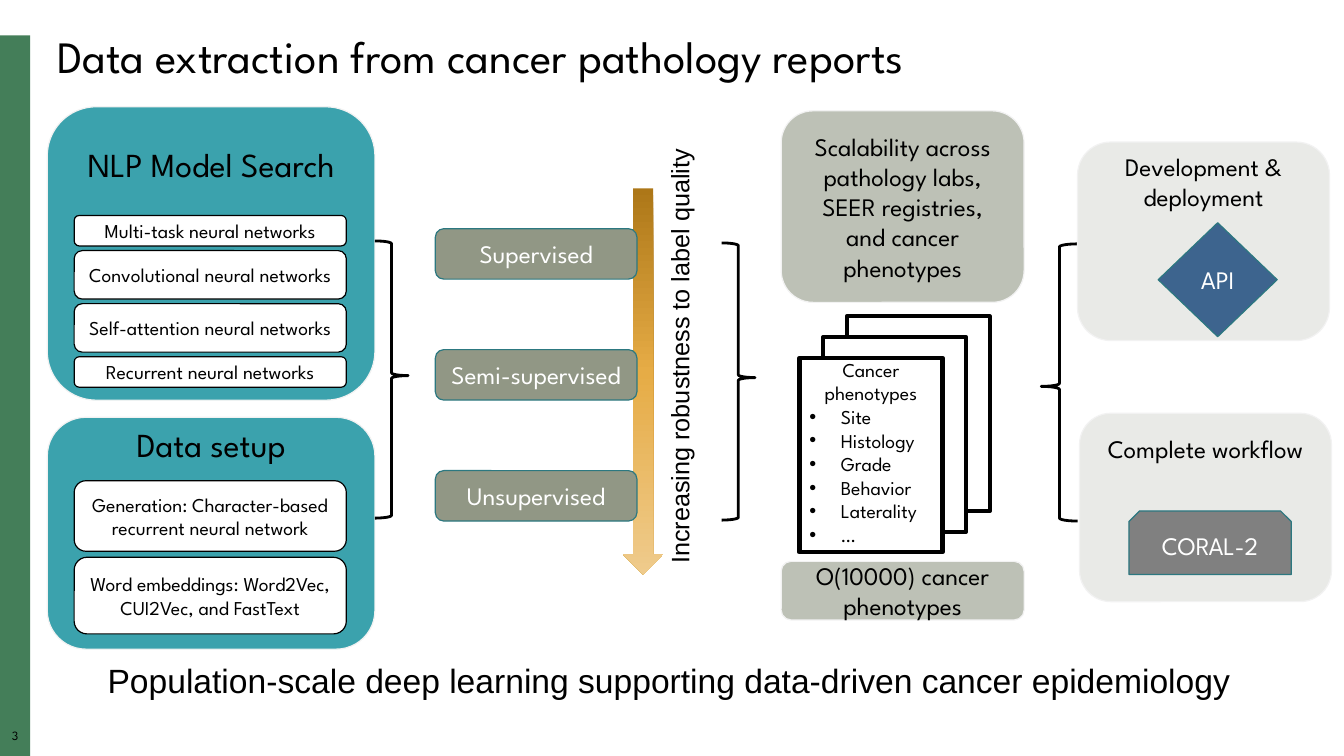
from copy import deepcopy

from lxml import etree
from pptx import Presentation
from pptx.dml.color import RGBColor
from pptx.enum import shapes, text
from pptx.oxml import ns
from pptx.util import Pt

BLACK = RGBColor(0x00, 0x00, 0x00)
WHITE = RGBColor(0xFF, 0xFF, 0xFF)
GREEN = RGBColor(0x44, 0x7E, 0x59)
TEAL = RGBColor(0x3B, 0xA2, 0xAD)
DARK_TEAL = RGBColor(0x2C, 0x78, 0x80)
OLIVE = RGBColor(0x91, 0x97, 0x85)
SAGE = RGBColor(0xBD, 0xC1, 0xB6)
PALE = RGBColor(0xE9, 0xEA, 0xE7)
EDGE = RGBColor(0xF2, 0xF2, 0xF2)
BLUE = RGBColor(0x3D, 0x64, 0x8E)
GRAY = RGBColor(0x80, 0x80, 0x80)
GOLD_STOPS = [
    (0, RGBColor(0xAD, 0x77, 0x18)),
    (0.48, RGBColor(0xE6, 0xAC, 0x46)),
    (1, RGBColor(0xEF, 0xCB, 0x8C)),
]

SPARTAN = "League Spartan"
ARIAL = "Arial"
SHAPE = shapes.MSO_SHAPE
CENTER = text.PP_ALIGN.CENTER
LEFT = text.PP_ALIGN.LEFT


def add_part(slide, kind, box, fill=None, line=None, width=0.85):
    shape = slide.shapes.add_shape(kind, *map(Pt, box))
    shape.shadow.inherit = False
    if fill is None:
        shape.fill.background()
    else:
        shape.fill.solid()
        shape.fill.fore_color.rgb = fill
    if line is None:
        shape.line.fill.background()
    else:
        shape.line.color.rgb = line
        shape.line.width = Pt(width)
    return shape


def style_paragraph(paragraph, size, color=BLACK, font=SPARTAN, align=CENTER):
    paragraph.alignment = align
    paragraph.font.size = Pt(size)
    paragraph.font.name = font
    paragraph.font.color.rgb = color


def write(shape, words, size, color=BLACK):
    frame = shape.text_frame
    frame.word_wrap = True
    frame.vertical_anchor = text.MSO_ANCHOR.MIDDLE
    frame.text = words
    style_paragraph(frame.paragraphs[0], size, color)


def add_label(slide, box, words, size, font=SPARTAN, align=LEFT):
    label = slide.shapes.add_textbox(*map(Pt, box))
    label.text_frame.word_wrap = True
    label.text_frame.text = words
    style_paragraph(label.text_frame.paragraphs[0], size, font=font, align=align)
    return label


def add_panel(slide, box, heading, size, fill, space_below):
    panel = add_part(slide, SHAPE.ROUNDED_RECTANGLE, box, fill, EDGE)
    write(panel, heading, size)
    panel.text_frame.margin_top = 0
    panel.text_frame.margin_bottom = Pt(space_below)


def add_side_bar(slide, box, number):
    left, top, width, height = box
    add_part(slide, SHAPE.RECTANGLE, box, GREEN)
    label = add_label(slide, (left, top + height - 18.5, width, 12.5), number, 9, align=CENTER)
    frame = label.text_frame
    frame.margin_left = frame.margin_right = frame.margin_top = frame.margin_bottom = 0
    frame.paragraphs[0].line_spacing = 0.9


def add_method_panel(slide, box, heading, first_item, gap, items):
    left, top, width, _ = box
    add_panel(slide, box, heading, 24, TEAL, 128)
    item_top = top + first_item
    for words, height in items:
        item_box = (left + 19.2, item_top, width - 39.6, height)
        item = add_part(slide, SHAPE.ROUNDED_RECTANGLE, item_box, WHITE, BLACK)
        write(item, words, 14)
        item_top += height + gap


def add_brace(slide, box, rotation=0):
    brace = add_part(slide, SHAPE.RIGHT_BRACE, box, line=BLACK, width=2)
    brace.adjustments[0] = 0.083
    brace.adjustments[1] = 0.486
    brace.rotation = rotation


def add_supervision_scale(slide, box, levels):
    left, top, width, height = box
    arrow = add_part(slide, SHAPE.DOWN_ARROW, (left + 134, top, 28.8, height), WHITE)
    arrow.fill.gradient()
    arrow.fill.gradient_angle = 270
    stop_list = arrow.element.spPr.find(".//" + ns.qn("a:gsLst"))
    stop_list.append(deepcopy(stop_list[0]))
    for stop, (position, color) in zip(arrow.fill.gradient_stops, GOLD_STOPS):
        stop.position = position
        stop.color.rgb = color
    for row, level in enumerate(levels):
        level_box = (left, top + 28.8 + row * 86.4, 144, 36)
        button = add_part(slide, SHAPE.ROUNDED_RECTANGLE, level_box, OLIVE, DARK_TEAL)
        write(button, level, 18, WHITE)
    label_width, label_height = 332.6, 28.8
    label_box = (
        left + width - (label_width + label_height) / 2,
        top + 108.8 - label_height / 2,
        label_width,
        label_height,
    )
    label = add_label(slide, label_box, "Increasing robustness to label quality", 18, ARIAL)
    label.rotation = 270


def add_phenotype_column(slide, box, phenotypes):
    left, top, width, height = box
    scalability = add_part(slide, SHAPE.ROUNDED_RECTANGLE, (left, top, width, 136.8), SAGE, EDGE)
    write(scalability, "Scalability across pathology labs, SEER registries, and cancer phenotypes", 18)
    for depth in (2, 1, 0):
        card_box = (left + 13 + depth * 16.9, top + 176.4 - depth * 14.8, 102.2, 139)
        card = add_part(slide, SHAPE.RECTANGLE, card_box, WHITE, BLACK, 3)
    write(card, "Cancer phenotypes", 14)
    frame = card.text_frame
    frame.vertical_anchor = text.MSO_ANCHOR.TOP
    frame.margin_top = 0
    for phenotype in phenotypes:
        paragraph = frame.add_paragraph()
        paragraph.text = phenotype
        properties = paragraph._p.get_or_add_pPr()
        properties.set("marL", str(Pt(22.5)))
        properties.set("indent", str(Pt(-22.5)))
        etree.SubElement(properties, ns.qn("a:buFont"), typeface=ARIAL)
        etree.SubElement(properties, ns.qn("a:buChar"), char="•")
        style_paragraph(paragraph, 14, align=LEFT)
    count_box = (left, top + height - 41.8, width, 41.8)
    count = add_part(slide, SHAPE.ROUNDED_RECTANGLE, count_box, SAGE, EDGE)
    write(count, "O(10000) cancer phenotypes", 18)


def add_delivery_panel(slide, box, heading, kind, badge_box, badge_words, badge_fill):
    left, top, _, _ = box
    add_panel(slide, box, heading, 18, PALE, 85)
    badge_left, badge_top, badge_width, badge_height = badge_box
    badge = add_part(
        slide, kind, (left + badge_left, top + badge_top, badge_width, badge_height), badge_fill, DARK_TEAL
    )
    write(badge, badge_words, 18, WHITE)


def main():
    presentation = Presentation()
    presentation.slide_width, presentation.slide_height = Pt(960), Pt(540)
    slide = presentation.slides.add_slide(presentation.slide_layouts[6])
    add_side_bar(slide, (0, 25.2, 21.6, 514.8), "3")
    title = add_label(slide, (33.8, 21.6, 900, 42.5), "Data extraction from cancer pathology reports", 32)
    title.text_frame.paragraphs[0].line_spacing = 0.9
    add_method_panel(slide, (33.8, 76.3, 234, 209.5), "NLP Model Search", 77.6, 3.3, [
        ("Multi-task neural networks", 21.8),
        ("Convolutional neural networks", 34.6),
        ("Self-attention neural networks", 34.6),
        ("Recurrent neural networks", 21.8),
    ])
    add_method_panel(slide, (33.8, 298.1, 234, 165.6), "Data setup", 45.3, 4.3, [
        ("Generation: Character-based recurrent neural network", 50.4),
        ("Word embeddings: Word2Vec, CUI2Vec, and FastText", 54.7),
    ])
    add_brace(slide, (267.8, 172.1, 23.8, 198))
    add_supervision_scale(
        slide, (311, 134.6, 188.6, 275.8), ["Supervised", "Semi-supervised", "Unsupervised"]
    )
    add_brace(slide, (515.5, 173.5, 23.8, 198))
    add_phenotype_column(
        slide, (558, 79.2, 173.5, 363.6), ["Site", "Histology", "Grade", "Behavior", "Laterality", "…"]
    )
    add_brace(slide, (743.8, 174.2, 25.9, 198), 180)
    add_delivery_panel(
        slide, (769.7, 101.5, 180, 141.8), "Development & deployment",
        SHAPE.DIAMOND, (57.6, 57.6, 85, 81.4), "API", BLUE,
    )
    add_delivery_panel(
        slide, (771.1, 295.2, 180, 134.6), "Complete workflow",
        SHAPE.SNIP_2_SAME_RECTANGLE, (35.3, 69.8, 115.9, 45.4), "CORAL-2", GRAY,
    )
    conclusion = "Population-scale deep learning supporting data-driven cancer epidemiology"
    add_label(slide, (69.8, 468, 820.8, 36), conclusion, 24, ARIAL)
    presentation.save("out.pptx")


if __name__ == "__main__":
    main()
